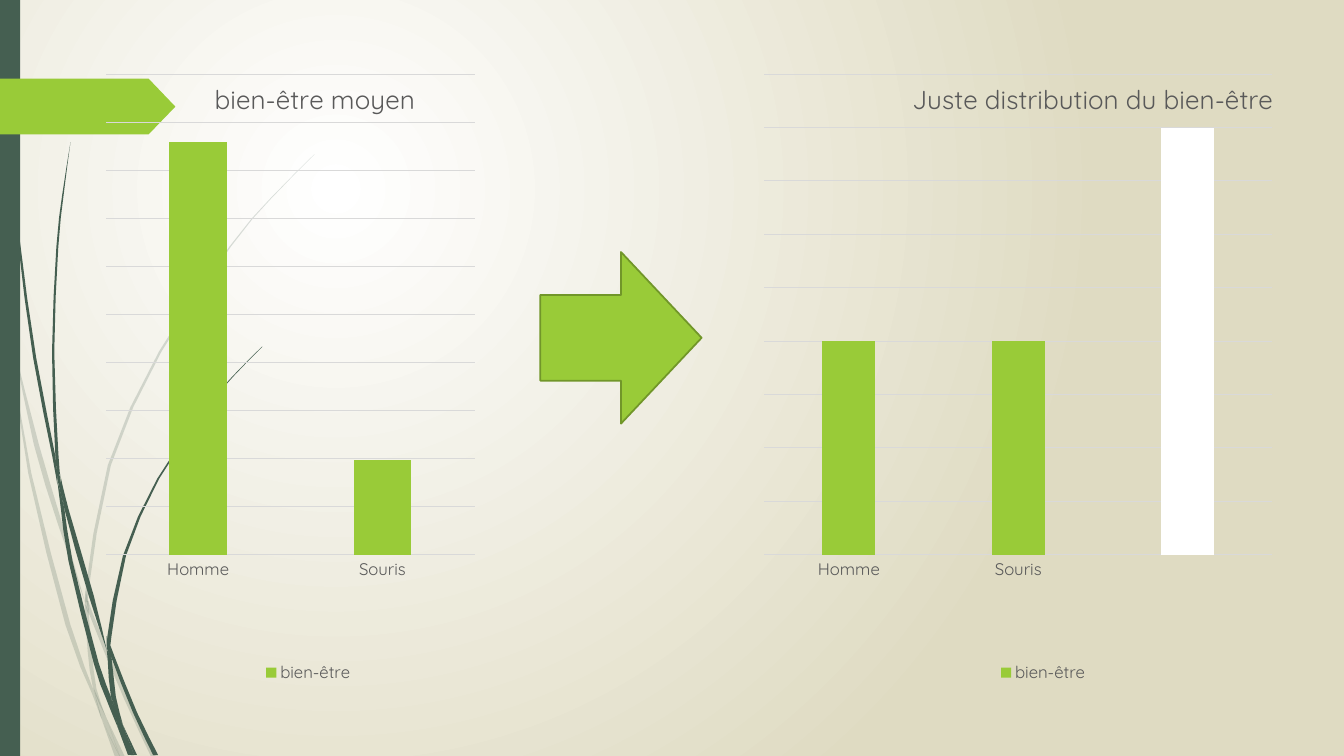
from dataclasses import dataclass

from lxml.etree import SubElement
from pptx import Presentation
from pptx.chart.data import CategoryChartData
from pptx.dml.color import RGBColor as Rgb
from pptx.enum.chart import XL_CHART_TYPE as ChartType, XL_LEGEND_POSITION as LegendPosition
from pptx.enum.chart import XL_TICK_LABEL_POSITION as TickLabels, XL_TICK_MARK as TickMark
from pptx.enum.shapes import MSO_SHAPE as Preset
from pptx.oxml.ns import qn
from pptx.util import Pt


@dataclass(frozen=True)
class Theme:
    font: str = "Quicksand"
    white: Rgb = Rgb(0xFF, 0xFF, 0xFF)
    sand: Rgb = Rgb(0xDF, 0xDB, 0xC2)
    forest: Rgb = Rgb(0x45, 0x5F, 0x51)
    lime: Rgb = Rgb(0x99, 0xCB, 0x38)
    arrow_edge: Rgb = Rgb(0x71, 0x96, 0x29)
    text: Rgb = Rgb(0x59, 0x59, 0x59)
    grid: Rgb = Rgb(0xD9, 0xD9, 0xD9)
    title_size: float = 18.6
    label_size: float = 12


@dataclass(frozen=True)
class Tuft:
    """Grass blades, each given as (x, y, width) along its centreline."""
    opacity: int
    blades: tuple


@dataclass(frozen=True)
class WellbeingChart:
    title: str
    left: float
    width: float
    categories: tuple
    values: tuple
    axis_max: float
    grid_step: float
    white_bars: tuple = ()


THEME = Theme()
CHART_TOP, CHART_HEIGHT = 49.4, 441.4

PALE_TUFT = Tuft(20, (
    ((0, 203, 0), (5, 231.8, 3), (7.9, 252, 0)),
    ((10.1, 248.4, 0), (26, 317.5, 3.6), (43, 374.4, 3.2), (61, 431, 0)),
    ((63.4, 429.1, 0), (64.8, 438, 2.7), (90, 499, 2.9), (109.8, 540.7, 3.6)),
    ((75.6, 511.9, 0), (87.5, 540.7, 3.6)),
    ((7.9, 252, 0), (21.3, 338, 2.2), (48.6, 446.5, 3.6), (66.6, 495, 2), (72.7, 514, 0)),
    ((60.5, 431.3, 0), (62.1, 438, 2.5), (64.1, 465.1, 2.9), (67.7, 492, 2.4), (75.6, 511.9, 0)),
    ((224.6, 110.2, 0.2), (193, 142.2, 0.7), (164.5, 176, 1.1), (114.5, 251, 1.8),
     (78.1, 332.3, 2.2), (62.3, 420.5, 2.2), (63, 429.1, 0.5)),
    ((72.7, 514, 0), (83.9, 540.7, 3.6)),
    ((61.2, 421.9, 0), (62, 431, 2.6), (63.4, 439.2, 0)),
    ((67, 491.8, 0), (73.8, 512, 3.6), (85.7, 540.7, 0.2)),
))
DARK_TUFT = Tuft(100, (
    ((2.5, 0, 0.7), (5.4, 79, 0.7), (13, 167.8, 1.4), (24.8, 255.6, 2.2), (38.5, 326, 2.2),
     (41, 346.3, 0)),
    ((43.2, 339.8, 0), (47.5, 363.6, 2.9), (65.2, 425.5, 3.6), (76.3, 464.4, 0)),
    ((79.2, 461.5, 0), (80.6, 469, 2.5), (96.5, 509, 2.9), (111.2, 539.3, 3.6)),
    ((41, 343.4, 0), (44.8, 363.6, 2.5), (50.4, 400.7, 2.9), (68.8, 473.8, 3.6),
     (77.2, 497.5, 4), (84.2, 519.8, 0)),
    ((50.4, 101.5, 0), (45, 139, 1), (41, 176.4, 1.4), (38, 251.3, 1.6), (40.7, 325, 2.2),
     (43.2, 339.8, 0)),
    ((87.8, 517.7, 0), (96.8, 539.3, 2.2)),
    ((39.6, 323.3, 0), (42.2, 343, 2), (46.1, 363.6, 0)),
    ((187.2, 247.7, 0.3), (166.3, 269, 0.7), (147.2, 292, 1), (113, 342, 1.4),
     (88.9, 397, 2.2), (78.1, 455, 2.9), (79.2, 461.5, 0)),
    ((84.2, 519.8, 0), (92.9, 539.3, 2.9)),
    ((76.3, 464.4, 0), (78.5, 472.3, 2.9), (81, 497.5, 3.5), (87.8, 517.7, 0)),
    ((76.3, 454.3, 0), (77.8, 463, 2.9), (79.9, 472.3, 0)),
    ((79.2, 497.5, 0), (86.4, 519.8, 4.3), (94.7, 539.3, 2.2)),
))
MEAN_WELLBEING = WellbeingChart(
    "bien-être moyen", 75.4, 289.4, ("Homme", "Souris"), (100, 23), 116.4, 11.64)
FAIR_WELLBEING = WellbeingChart(
    "Juste distribution du bien-être", 545.5, 398.9, ("Homme", "Souris", ""),
    (50, 50, 100), 112.5, 12.5, white_bars=(2,))


def paint(shape, color: Rgb) -> None:
    shape.shadow.inherit = False
    shape.fill.solid()
    shape.fill.fore_color.rgb = color
    shape.line.fill.background()


def paint_background(slide) -> None:
    fill = slide.background.fill
    fill.gradient()
    for stop, color in zip(fill.gradient_stops, (THEME.white, THEME.sand)):
        stop.color.rgb = color
    gradient = slide.element.find(".//" + qn("a:gradFill"))
    gradient.remove(gradient.find(qn("a:lin")))
    radial = SubElement(gradient, qn("a:path"), {"path": "circle"})
    SubElement(radial, qn("a:fillToRect"), {"l": "50000", "t": "50000", "r": "100000", "b": "100000"})


def smooth(stations: tuple) -> list:
    """Add a Catmull-Rom midpoint between neighbouring stations."""
    padded = (stations[0], *stations, stations[-1])
    curve = [stations[0]]
    for i, station in enumerate(stations[1:]):
        midpoint = tuple((9 * (b + c) - a - d) / 16 for a, b, c, d in zip(*padded[i:i + 4]))
        curve += [midpoint, station]
    return curve


def draw_outline(slide, points: list, color: Rgb):
    corners = [(Pt(x), Pt(y)) for x, y in points]
    builder = slide.shapes.build_freeform(*corners[0], scale=1.0)
    builder.add_line_segments(corners[1:], close=True)
    outline = builder.convert_to_shape()
    paint(outline, color)
    return outline


def draw_tuft(slide, tuft: Tuft) -> None:
    for blade in tuft.blades:
        centre = smooth(blade) if len(blade) > 2 else blade
        left_edge = [(x - width / 2, y) for x, y, width in centre]
        right_edge = [(x + width / 2, y) for x, y, width in reversed(centre)]
        outline = draw_outline(slide, left_edge + right_edge, THEME.forest)
        if tuft.opacity < 100:
            color = outline._element.spPr.find(qn("a:solidFill"))[0]
            SubElement(color, qn("a:alpha"), {"val": str(tuft.opacity * 1000)})


def style_font(font, size: float) -> None:
    font.name, font.size, font.bold = THEME.font, Pt(size), False
    font.color.rgb = THEME.text


def place(part, index: int, **fractions) -> None:
    """Give a chart part a manual layout, as fractions of the chart."""
    layout = part.find(qn("c:layout"))
    if layout is None:
        layout = part.makeelement(qn("c:layout"))
        part.insert(index, layout)
    manual = SubElement(layout, qn("c:manualLayout"))
    for tag, value in fractions.items():
        SubElement(manual, qn("c:" + tag), {"val": str(value)})


def draw_chart(slide, spec: WellbeingChart) -> None:
    data = CategoryChartData()
    data.categories = spec.categories
    data.add_series("bien-être", spec.values)
    chart = slide.shapes.add_chart(ChartType.COLUMN_CLUSTERED, Pt(spec.left), Pt(CHART_TOP),
                                   Pt(spec.width), Pt(CHART_HEIGHT), data).chart
    style_font(chart.font, THEME.label_size)
    # Title, laid over the plot
    heading = chart.chart_title.text_frame
    heading.text = spec.title
    style_font(heading.paragraphs[0].runs[0].font, THEME.title_size)
    title = chart.chart_title._element
    place(title, 1, xMode="edge", yMode="edge", x=0.257, y=0.01)
    title.find(qn("c:overlay")).set("val", "1")
    # Bars
    plot = chart.plots[0]
    plot.gap_width, plot.overlap, plot.vary_by_categories = 219, -27, False
    bars = plot.series[0]
    paints = [(bars.format.fill, THEME.lime)]
    paints += [(bars.points[index].format.fill, THEME.white) for index in spec.white_bars]
    for fill, color in paints:
        fill.solid()
        fill.fore_color.rgb = color
    place(chart._chartSpace.find(".//" + qn("c:plotArea")), 0, layoutTarget="inner",
          xMode="edge", yMode="edge", x=0, y=0.008, w=0.911, h=0.778)
    # Axes and legend
    scale, names = chart.value_axis, chart.category_axis
    scale.minimum_scale, scale.maximum_scale = 0, spec.axis_max
    scale.major_unit, scale.has_major_gridlines = spec.grid_step, True
    scale.tick_label_position, scale.visible = TickLabels.NONE, False
    names.major_tick_mark = names.minor_tick_mark = TickMark.NONE
    style_font(names.tick_labels.font, THEME.label_size)
    for line in (scale.major_gridlines.format.line, names.format.line):
        line.color.rgb, line.width = THEME.grid, Pt(0.75)
    chart.has_legend = True
    chart.legend.position, chart.legend.include_in_layout = LegendPosition.BOTTOM, False
    style_font(chart.legend.font, THEME.label_size)


def main() -> None:
    deck = Presentation()
    deck.slide_width, deck.slide_height = Pt(960), Pt(540)
    slide = deck.slides.add_slide(deck.slide_layouts[6])
    # Backdrop: gradient, grass, side band and page tab
    paint_background(slide)
    for tuft in (PALE_TUFT, DARK_TUFT):
        draw_tuft(slide, tuft)
    paint(slide.shapes.add_shape(Preset.RECTANGLE, 0, 0, Pt(14.4), Pt(540)), THEME.forest)
    tab = [(0, 56.2), (106.2, 56.2), (125.3, 76.2), (106.2, 96), (0, 96)]
    draw_outline(slide, tab, THEME.lime)
    # From mean to fair distribution
    draw_chart(slide, MEAN_WELLBEING)
    arrow = slide.shapes.add_shape(Preset.RIGHT_ARROW, Pt(386), Pt(180), Pt(115.2), Pt(122.6))
    paint(arrow, THEME.lime)
    arrow.line.color.rgb, arrow.line.width = THEME.arrow_edge, Pt(1.25)
    draw_chart(slide, FAIR_WELLBEING)
    deck.save("out.pptx")


if __name__ == "__main__":
    main()
